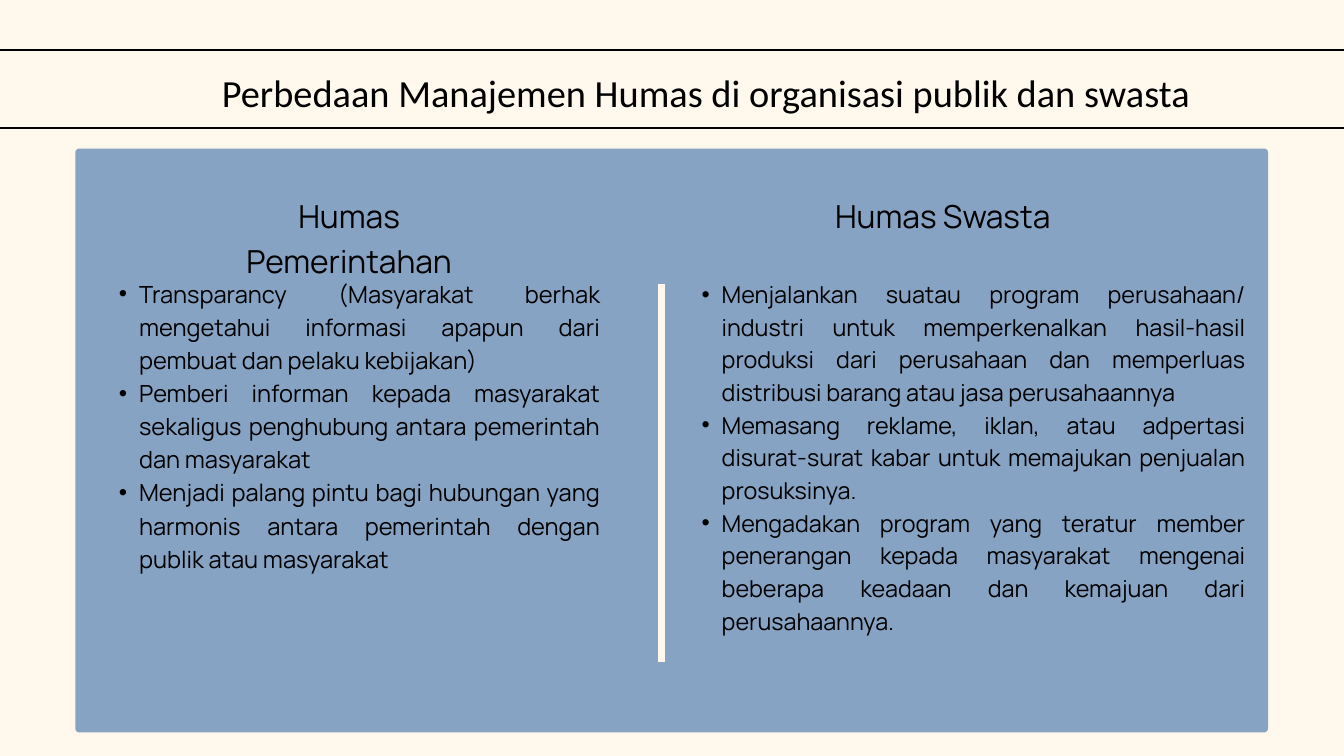
from pptx import Presentation
from pptx.dml.color import RGBColor
from pptx.enum.shapes import MSO_CONNECTOR as Connector, MSO_SHAPE as Shape
from pptx.enum.text import MSO_ANCHOR as Anchor, MSO_AUTO_SIZE as AutoSize, PP_ALIGN as Align
from pptx.oxml.ns import qn
from pptx.util import Inches, Pt
from lxml.etree import SubElement

CREAM, BLUE, BLACK = "FFF8ED", "87A3C4", "000000"

GOVERNMENT_POINTS = [
    "Transparancy (Masyarakat berhak mengetahui informasi apapun dari pembuat dan pelaku kebijakan)",
    "Pemberi informan kepada masyarakat sekaligus penghubung antara pemerintah dan masyarakat",
    "Menjadi palang pintu bagi hubungan yang harmonis antara pemerintah dengan publik atau masyarakat",
]
PRIVATE_POINTS = [
    "Menjalankan suatau program perusahaan/ industri untuk memperkenalkan hasil-hasil produksi "
    "dari perusahaan dan memperluas distribusi barang atau jasa perusahaannya",
    "Memasang reklame, iklan, atau adpertasi disurat-surat kabar untuk memajukan penjualan prosuksinya.",
    "Mengadakan program yang teratur member penerangan kepada masyarakat mengenai beberapa "
    "keadaan dan kemajuan dari perusahaannya.",
]


def color(value):
    """Turn a hex string into a colour."""
    return RGBColor.from_string(value)


def place(box, left, top, width, height):
    """Set the position and size of a shape in inches."""
    box.left, box.top = Inches(left), Inches(top)
    box.width, box.height = Inches(width), Inches(height)


def add_bullet(para, indent):
    """Give a paragraph a hanging round bullet."""
    props = para._p.get_or_add_pPr()
    props.set("marL", str(Inches(indent)))
    props.set("indent", str(Inches(-0.3)))
    SubElement(props, qn("a:buFont")).set("typeface", "Arial")
    SubElement(props, qn("a:buChar")).set("char", "•")


def fill_text(box, lines, size, spacing, align=Align.CENTER, font="Manrope", indent=None):
    """Write paragraphs in one style into a box without margins."""
    frame = box.text_frame
    frame.word_wrap = True
    frame.auto_size = AutoSize.NONE
    frame.vertical_anchor = Anchor.TOP
    frame.margin_left = frame.margin_top = frame.margin_right = frame.margin_bottom = 0
    frame.text = "\n".join(lines)
    for para in frame.paragraphs:
        if indent:
            add_bullet(para, indent)
        para.alignment = align
        para.line_spacing = Pt(spacing)
        para.font.name = font
        para.font.size = Pt(size)
        para.font.color.rgb = color(BLACK)


def add_text(page, area, lines, size, spacing, **style):
    """Add a text box at the given area."""
    box = page.shapes.add_textbox(*map(Inches, area))
    fill_text(box, lines, size, spacing, **style)


def add_panel(page, left, top, width, height, radius):
    """Add the blue panel with slightly rounded corners."""
    panel = page.shapes.add_shape(Shape.ROUNDED_RECTANGLE, *map(Inches, (left, top, width, height)))
    panel.adjustments[0] = radius / min(width, height)
    panel.shadow.inherit = False
    panel.fill.solid()
    panel.fill.fore_color.rgb = color(BLUE)
    panel.line.fill.background()


def add_divider(page, x, top, bottom):
    """Add a thick vertical line between the columns."""
    divider = page.shapes.add_connector(
        Connector.STRAIGHT, Inches(x), Inches(top), Inches(x), Inches(bottom))
    divider.line.color.rgb = color(CREAM)
    divider.line.width = Pt(7.5)
    SubElement(divider._element.spPr, qn("a:effectLst"))


def add_title_frame(page, left, top, width, height):
    """Add the outlined band whose sides run past the slide edges."""
    band = page.shapes.add_shape(Shape.RECTANGLE, *map(Inches, (left, top, width, height)))
    band.shadow.inherit = False
    band.fill.background()
    band.line.color.rgb = color(BLACK)
    band.line.width = Pt(2.25)


def add_title(page, text):
    """Move and format the title placeholder, in front of the band."""
    title = page.shapes.title
    place(title, 2.16, 1.01, 16.71, 0.69)
    fill_text(title, [text], 41.1, 51, font="Calibri")
    page.shapes._spTree.append(title._element)


def main():
    """Build the slide and save it."""
    deck = Presentation()
    deck.slide_width, deck.slide_height = Inches(20), Inches(11.25)
    page = deck.slides.add_slide(deck.slide_layouts[5])
    page.background.fill.solid()
    page.background.fill.fore_color.rgb = color(CREAM)

    add_panel(page, 1.12, 2.21, 17.75, 8.69, 0.06)
    for top, bottom in ((4.22, 7.03), (7.03, 9.85)):
        add_divider(page, 9.84, top, bottom)
    add_text(page, (2.99, 2.84, 4.41, 1.33), ["Humas Pemerintahan"], 34, 47.6)
    add_text(page, (1.47, 4.09, 7.46, 4.96), GOVERNMENT_POINTS, 25.3, 35.5,
             align=Align.JUSTIFY, indent=0.6)
    add_text(page, (10.15, 4.1, 8.38, 6.28), PRIVATE_POINTS, 25, 35,
             align=Align.JUSTIFY, indent=0.59)
    add_text(page, (12.38, 2.84, 3.3, 1.33), ["Humas Swasta"], 34, 47.6)
    add_title_frame(page, -1.76, 0.75, 22.76, 1.15)
    add_title(page, "Perbedaan Manajemen Humas di organisasi publik dan swasta")
    deck.save("out.pptx")


if __name__ == "__main__":
    main()
